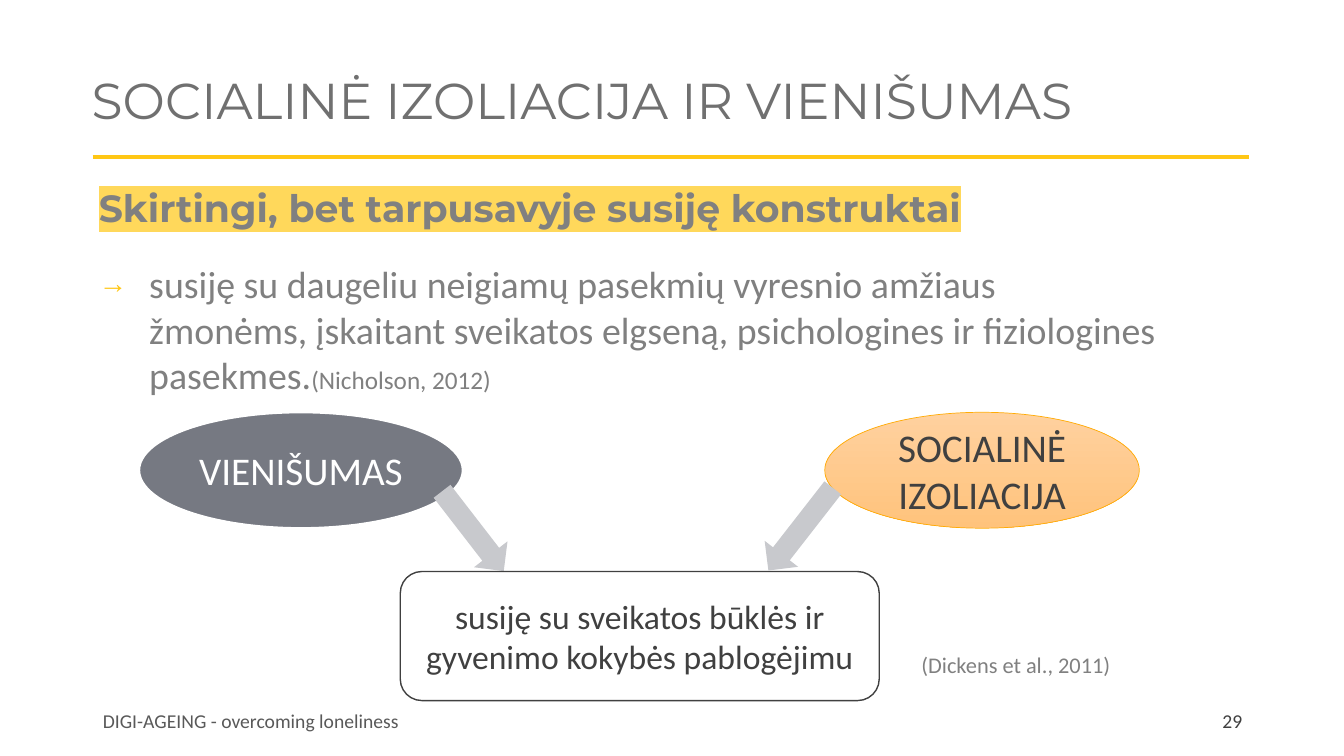
from dataclasses import dataclass
from typing import Optional

from lxml import etree
from pptx import Presentation
from pptx.dml.color import RGBColor
from pptx.enum import shapes, text
from pptx.oxml import ns
from pptx.util import Inches, Pt


@dataclass(frozen=True)
class Theme:
    heading_font: str = "Montserrat"
    body_font: str = "Calibri"
    yellow: str = "FFC715"
    highlight: str = "FFD85B"
    title_gray: str = "707070"
    body_gray: str = "808080"
    footer_gray: str = "595959"
    dark: str = "404040"
    white: str = "FFFFFF"
    slate: str = "767982"
    arrow_gray: str = "C8C9CD"
    orange_line: str = "FFAC06"
    orange_top: str = "FFD19F"
    orange_bottom: str = "FFC37C"
    title_size: float = 36
    concept_size: float = 28
    body_size: float = 27
    outcome_size: float = 24
    citation_size: float = 18
    source_size: float = 16
    footer_size: float = 14


THEME = Theme()


@dataclass(frozen=True)
class Box:
    left: float
    top: float
    width: float
    height: float

    def lengths(self) -> tuple:
        return tuple(Inches(side) for side in (self.left, self.top, self.width, self.height))


@dataclass(frozen=True)
class Label:
    words: str
    size: float
    color: str
    align: text.PP_ALIGN = text.PP_ALIGN.LEFT
    anchor: text.MSO_ANCHOR = text.MSO_ANCHOR.MIDDLE
    inset: float = 0.1


@dataclass(frozen=True)
class Node:
    kind: shapes.MSO_SHAPE
    box: Box
    label: Label
    fills: tuple
    line: str
    line_width: float


@dataclass(frozen=True)
class BlockArrow:
    box: Box
    rotation: float


def rgb(color: str) -> RGBColor:
    return RGBColor.from_string(color)


def add_child(parent, tag: str, **attributes: str):
    return etree.SubElement(parent, ns.qn(tag), attributes)


def add_run(paragraph, words: str, size: float, color: str,
            font: str = THEME.body_font, bold: bool = False):
    run = paragraph.add_run()
    run.text = words
    run.font.size = Pt(size)
    run.font.bold = bold
    run.font.color.rgb = rgb(color)
    run.font.name = font
    return run


def write_label(frame, label: Label) -> None:
    frame.word_wrap = True
    frame.vertical_anchor = label.anchor
    frame.margin_left = frame.margin_right = Inches(label.inset)
    paragraph = frame.paragraphs[0]
    paragraph.alignment = label.align
    add_run(paragraph, label.words, label.size, label.color)


def place(shape, box: Box) -> None:
    shape.left, shape.top, shape.width, shape.height = box.lengths()


def fill_title(title) -> None:
    place(title, Box(0.81, 0.47, 11.85, 1.1))
    frame = title.text_frame
    frame.auto_size = text.MSO_AUTO_SIZE.NONE
    frame.vertical_anchor = text.MSO_ANCHOR.MIDDLE
    paragraph = frame.paragraphs[0]
    paragraph.alignment = text.PP_ALIGN.LEFT
    paragraph.line_spacing = 0.9
    add_run(paragraph, "SOCIALINĖ IZOLIACIJA IR VIENIŠUMAS",
            THEME.title_size, THEME.title_gray, THEME.heading_font)


def set_bullet(paragraph, symbol: Optional[str], indent: float) -> None:
    """Hang the paragraph from an arrow bullet, or clear the bullet if symbol is None."""
    properties = paragraph._p.get_or_add_pPr()
    properties.set("marL", str(Inches(indent)))
    properties.set("indent", str(-Inches(indent)))
    if symbol is None:
        add_child(properties, "a:buNone")
        return
    add_child(add_child(properties, "a:buClr"), "a:srgbClr", val=THEME.yellow)
    add_child(properties, "a:buSzPct", val="75000")
    add_child(properties, "a:buChar", char=symbol)


def highlight(run, color: str) -> None:
    marker = etree.Element(ns.qn("a:highlight"))
    add_child(marker, "a:srgbClr", val=color)
    run._r.rPr.find(ns.qn("a:latin")).addprevious(marker)


def fill_body(body) -> None:
    place(body, Box(0.88, 1.83, 10.71, 4.86))
    frame = body.text_frame
    frame.auto_size = text.MSO_AUTO_SIZE.NONE
    lead, finding = frame.paragraphs[0], frame.add_paragraph()
    lead.space_before = finding.space_before = Pt(10)
    lead.space_after = Pt(12)
    lead.line_spacing = 0.9
    set_bullet(lead, None, 0)
    set_bullet(finding, "→", 0.5)
    run = add_run(lead, "Skirtingi, bet tarpusavyje susiję konstruktai",
                  THEME.body_size, THEME.body_gray, THEME.heading_font, bold=True)
    highlight(run, THEME.highlight)
    add_run(finding, "susiję su daugeliu neigiamų pasekmių vyresnio amžiaus žmonėms, įskaitant "
            "sveikatos elgseną, psichologines ir fiziologines pasekmes.",
            THEME.body_size, THEME.body_gray)
    add_run(finding, "(Nicholson, 2012)", THEME.citation_size, THEME.body_gray)


def add_text(slide, box: Box, label: Label) -> None:
    write_label(slide.shapes.add_textbox(*box.lengths()).text_frame, label)


def add_node(slide, node: Node) -> None:
    shape = slide.shapes.add_shape(node.kind, *node.box.lengths())
    shape.shadow.inherit = False
    if len(node.fills) == 1:
        shape.fill.solid()
        shape.fill.fore_color.rgb = rgb(node.fills[0])
    else:
        shape.fill.gradient()
        shape.fill.gradient_angle = 270
        for stop, color in zip(shape.fill.gradient_stops, node.fills):
            stop.color.rgb = rgb(color)
    shape.line.color.rgb = rgb(node.line)
    shape.line.width = Pt(node.line_width)
    write_label(shape.text_frame, node.label)


def add_block_arrow(slide, arrow: BlockArrow) -> None:
    shape = slide.shapes.add_shape(shapes.MSO_SHAPE.RIGHT_ARROW, *arrow.box.lengths())
    shape.shadow.inherit = False
    shape.rotation = arrow.rotation
    shape.fill.solid()
    shape.fill.fore_color.rgb = rgb(THEME.arrow_gray)
    shape.line.fill.background()


def add_title_rule(slide) -> None:
    rule = slide.shapes.add_connector(shapes.MSO_CONNECTOR.STRAIGHT, Inches(0.92), Inches(1.56),
                                      Inches(12.39), Inches(1.56))
    rule.line.color.rgb = rgb(THEME.yellow)
    rule.line.width = Pt(3)
    add_child(rule._element.spPr, "a:effectLst")


CENTER, RIGHT = text.PP_ALIGN.CENTER, text.PP_ALIGN.RIGHT
LONELINESS = Node(shapes.MSO_SHAPE.OVAL, Box(1.38, 4.09, 3.21, 1.15),
                  Label("VIENIŠUMAS", THEME.concept_size, THEME.white, CENTER),
                  (THEME.slate,), THEME.white, 1.5)
ISOLATION = Node(shapes.MSO_SHAPE.OVAL, Box(8.18, 4.09, 3.12, 1.15),
                 Label("SOCIALINĖ IZOLIACIJA", THEME.concept_size, THEME.dark, CENTER),
                 (THEME.orange_top, THEME.orange_bottom), THEME.orange_line, 0.5)
OUTCOME = Node(shapes.MSO_SHAPE.ROUNDED_RECTANGLE, Box(3.97, 5.67, 4.75, 1.28),
               Label("susiję su sveikatos būklės ir gyvenimo kokybės pablogėjimu",
                     THEME.outcome_size, THEME.dark, CENTER),
               (THEME.white,), THEME.dark, 1)
TEXTS = (
    (Box(0.94, 6.95, 7.45, 0.39), Label("DIGI-AGEING - overcoming loneliness",
                                        THEME.footer_size, THEME.footer_gray, inset=0.08)),
    (Box(9.42, 6.95, 3, 0.4), Label("29", THEME.footer_size, THEME.dark, RIGHT)),
    (Box(9.04, 6.41, 2.55, 0.37), Label("(Dickens et al., 2011)", THEME.source_size,
                                        THEME.body_gray, anchor=text.MSO_ANCHOR.TOP)),
)


def main() -> None:
    presentation = Presentation()
    presentation.slide_width, presentation.slide_height = Inches(13.33), Inches(7.5)
    slide = presentation.slides.add_slide(presentation.slide_layouts[1])
    fill_title(slide.shapes.title)
    fill_body(slide.placeholders[1])
    add_title_rule(slide)
    for box, label in TEXTS:
        add_text(slide, box, label)
    add_node(slide, LONELINESS)
    add_block_arrow(slide, BlockArrow(Box(4.19, 5.06, 1, 0.42), 52.3))
    add_node(slide, OUTCOME)
    add_node(slide, ISOLATION)
    add_block_arrow(slide, BlockArrow(Box(7.42, 5.04, 1.04, 0.42), 127.9))
    presentation.save("out.pptx")


if __name__ == "__main__":
    main()
